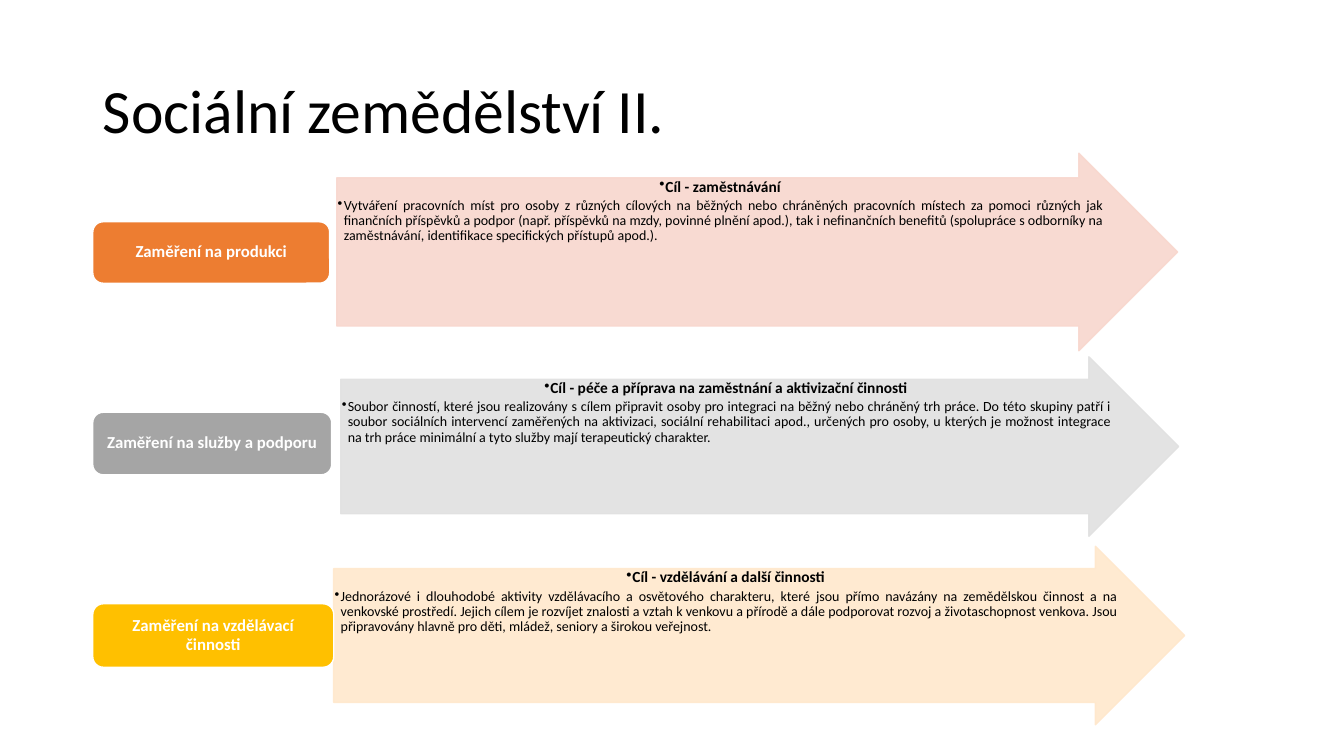
import pptx
import pptx.util
import pptx.dml.color
import pptx.enum.shapes
import pptx.enum.text
import pptx.oxml
import pptx.oxml.ns
import lxml.etree

RGB = pptx.dml.color.RGBColor
SHAPE = pptx.enum.shapes.MSO_SHAPE
ALIGN = pptx.enum.text.PP_ALIGN
ANCHOR = pptx.enum.text.MSO_ANCHOR
PX = 9144
FONT = "Calibri"
BLACK = RGB(0x00, 0x00, 0x00)
WHITE = RGB(0xFF, 0xFF, 0xFF)
ORANGE = RGB(0xED, 0x7D, 0x31)
GRAY = RGB(0xA5, 0xA5, 0xA5)
GOLD = RGB(0xFF, 0xC0, 0x00)
PALE_ORANGE = RGB(0xF8, 0xD7, 0xCE)
PALE_GRAY = RGB(0xE1, 0xE1, 0xE1)
PALE_GOLD = RGB(0xFF, 0xE8, 0xCC)

ROWS = [
    ((92, 220, 235, 61), ORANGE, "Zaměření na produkci",
     (334, 152, 834, 196), PALE_ORANGE, "Cíl - zaměstnávání",
     "Vytváření pracovních míst pro osoby z různých cílových na běžných nebo "
     "chráněných pracovních místech za pomoci různých jak finančních příspěvků "
     "a podpor (např. příspěvků na mzdy, povinné plnění apod.), tak i "
     "nefinančních benefitů (spolupráce s odborníky na zaměstnávání, "
     "identifikace specifických přístupů apod.)."),
    ((92, 409, 237, 62), GRAY, "Zaměření na služby a podporu",
     (338, 354, 831, 178), PALE_GRAY,
     "Cíl - péče a příprava na zaměstnání a aktivizační činnosti",
     "Soubor činností, které jsou realizovány s cílem připravit osoby pro "
     "integraci na běžný nebo chráněný trh práce. Do této skupiny patří i "
     "soubor sociálních intervencí zaměřených na aktivizaci, sociální "
     "rehabilitaci apod., určených pro osoby, u kterých je možnost integrace "
     "na trh práce minimální a tyto služby mají terapeutický charakter."),
    ((92, 599, 239, 63), GOLD, "Zaměření na vzdělávací činnosti",
     (331, 542, 844, 177), PALE_GOLD, "Cíl - vzdělávání a další činnosti",
     "Jednorázové i dlouhodobé aktivity vzdělávacího a osvětového charakteru, "
     "které jsou přímo navázány na zemědělskou činnost a na venkovské "
     "prostředí. Jejich cílem je rozvíjet znalosti a vztah k venkovu a přírodě "
     "a dále podporovat rozvoj a životaschopnost venkova. Jsou připravovány "
     "hlavně pro děti, mládež, seniory a širokou veřejnost."),
]


def emu(box):
    return [v * PX for v in box]


def write(p, text, size, color, align, bold=False):
    p.text = text
    p.alignment = align
    p.line_spacing = 0.9
    font = p.runs[0].font
    font.name = FONT
    font.size = pptx.util.Pt(size)
    font.bold = bold
    font.color.rgb = color


def add_bullet(p):
    p.level = 1
    p.space_after = pptx.util.Pt(2)
    pPr = p._p.get_or_add_pPr()
    pPr.set("marL", str(6 * PX))
    pPr.set("indent", str(-6 * PX))
    bu = lxml.etree.SubElement(pPr, pptx.oxml.ns.qn("a:buChar"))
    bu.set("char", "•")


def add_block(slide, kind, box, fill, line, inset_x, inset_y, anchor):
    sp = slide.shapes.add_shape(kind, *emu(box))
    sp.shadow.inherit = False
    sp.fill.solid()
    sp.fill.fore_color.rgb = fill
    sp.line.color.rgb = line
    sp.line.width = pptx.util.Pt(1)
    tf = sp.text_frame
    tf.word_wrap = True
    tf.vertical_anchor = anchor
    tf.margin_left = tf.margin_right = inset_x * PX
    tf.margin_top = tf.margin_bottom = inset_y * PX
    return sp


def add_title(slide, box, text):
    title = slide.shapes.title
    title.left, title.top, title.width, title.height = emu(box)
    tf = title.text_frame
    tf.auto_size = pptx.enum.text.MSO_AUTO_SIZE.NONE
    tf.vertical_anchor = ANCHOR.MIDDLE
    write(tf.paragraphs[0], text, 44, BLACK, ALIGN.LEFT)


def add_arrow(slide, box, color, goal, detail):
    sp = add_block(slide, SHAPE.RIGHT_ARROW, box, color, color, 1, 1, ANCHOR.TOP)
    sp.adjustments[0] = 0.75
    sp.adjustments[1] = 0.5
    spPr = sp._element.spPr
    for clr in spPr.iter(pptx.oxml.ns.qn("a:srgbClr")):
        alpha = lxml.etree.SubElement(clr, pptx.oxml.ns.qn("a:alpha"))
        alpha.set("val", "90000")
    tf = sp.text_frame
    head = tf.paragraphs[0]
    body = tf.add_paragraph()
    add_bullet(head)
    add_bullet(body)
    write(head, goal, 11, BLACK, ALIGN.CENTER, True)
    write(body, detail, 10, BLACK, ALIGN.JUSTIFY)


def add_label(slide, box, color, text):
    sp = add_block(slide, SHAPE.ROUNDED_RECTANGLE, box, color, WHITE, 8, 6,
                   ANCHOR.MIDDLE)
    write(sp.text_frame.paragraphs[0], text, 12, WHITE, ALIGN.CENTER, True)


def main():
    prs = pptx.Presentation()
    prs.slide_width, prs.slide_height = emu((1333, 750))
    slide = prs.slides.add_slide(prs.slide_layouts[5])
    add_title(slide, (92, 40, 1150, 145), "Sociální zemědělství II.")
    for label_box, color, label, arrow_box, pale, goal, detail in ROWS:
        add_arrow(slide, arrow_box, pale, goal, detail)
        add_label(slide, label_box, color, label)
    prs.save("out.pptx")


if __name__ == "__main__":
    main()
